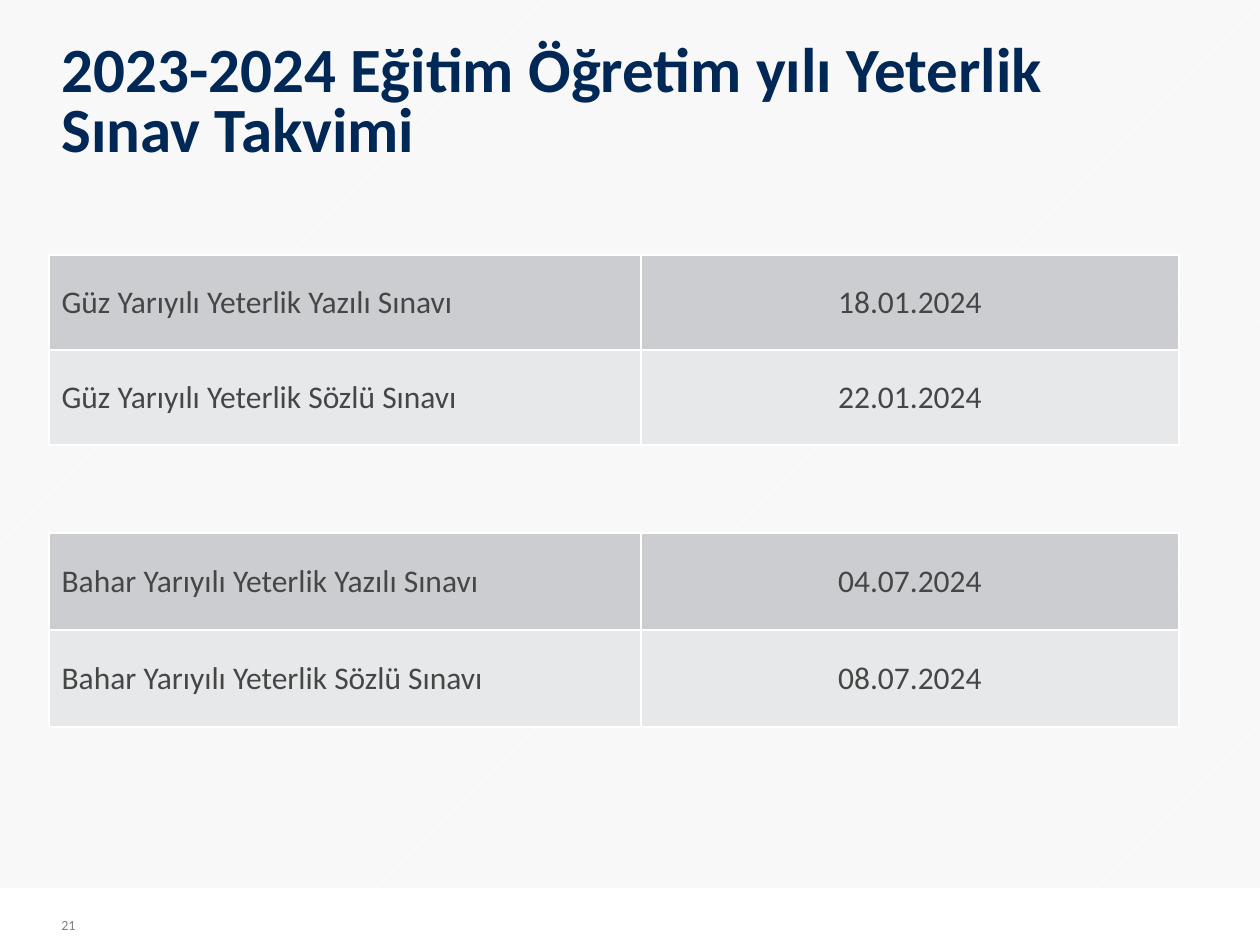
from lxml.etree import SubElement
from pptx import Presentation
from pptx.dml.color import RGBColor
from pptx.enum.dml import MSO_PATTERN
from pptx.enum.shapes import MSO_SHAPE
from pptx.enum.text import MSO_ANCHOR, MSO_AUTO_SIZE, PP_ALIGN
from pptx.oxml.ns import qn
from pptx.util import Pt

PX = 914400 / 126
COLORS = {
    "white": "FFFFFF", "page": "F8F8F8", "title": "002856", "text": "464646",
    "number": "808080", "dark_row": "CCCDD1", "light_row": "E7E8E9",
}
C = {name: RGBColor.from_string(value) for name, value in COLORS.items()}


def px(*values):
    return [round(v * PX) for v in values]


def style(p, size, color, bold=False):
    p.font.name = "Calibri"
    p.font.size = Pt(size)
    p.font.bold = bold
    p.font.color.rgb = C[color]


prs = Presentation()
prs.slide_width, prs.slide_height = px(1260, 945)
s = prs.slides.add_slide(prs.slide_layouts[5])

# Background and footer band
bg = s.background.fill
bg.patterned()
bg.pattern = MSO_PATTERN.PERCENT_5
bg.fore_color.rgb = C["white"]
bg.back_color.rgb = C["page"]
band = s.shapes.add_shape(MSO_SHAPE.RECTANGLE, *px(0, 888, 1260, 57))
band.shadow.inherit = False
band.fill.solid()
band.fill.fore_color.rgb = C["white"]
band.line.fill.background()

# Title
title = s.shapes.title
title.left, title.top, title.width, title.height = px(49, 34, 1130, 137)
tf = title.text_frame
tf.text = "2023-2024 Eğitim Öğretim yılı Yeterlik Sınav Takvimi"
tf.word_wrap = True
tf.auto_size = MSO_AUTO_SIZE.NONE
tf.vertical_anchor = MSO_ANCHOR.BOTTOM
p = tf.paragraphs[0]
p.alignment = PP_ALIGN.LEFT
p.line_spacing = 0.8
style(p, 36, "title", bold=True)

# Exam tables: term, top, row height, written and oral dates
terms = [
    ("Güz", 255, 95, ("18.01.2024", "22.01.2024")),
    ("Bahar", 533, 97, ("04.07.2024", "08.07.2024")),
]
for term, top, row_h, dates in terms:
    table = s.shapes.add_table(2, 2, *px(49, top, 1130, 2 * row_h)).table
    table.columns[0].width, table.columns[1].width = px(592, 538)
    for row, exam, date, fill in zip(range(2), ("Yazılı", "Sözlü"), dates,
                                     ("dark_row", "light_row")):
        texts = (f"{term} Yarıyılı Yeterlik {exam} Sınavı", date)
        for col, align in enumerate((PP_ALIGN.LEFT, PP_ALIGN.CENTER)):
            cell = table.cell(row, col)
            cell.text = texts[col]
            cell.vertical_anchor = MSO_ANCHOR.MIDDLE
            p = cell.text_frame.paragraphs[0]
            p.alignment = align
            style(p, 18, "text")
            # White borders precede the fill in the cell properties
            tcPr = cell._tc.get_or_add_tcPr()
            for side in ("a:lnL", "a:lnR", "a:lnT", "a:lnB"):
                ln = SubElement(tcPr, qn(side), w=str(Pt(1)))
                solid = SubElement(ln, qn("a:solidFill"))
                SubElement(solid, qn("a:srgbClr"), val=COLORS["white"])
            cell.fill.solid()
            cell.fill.fore_color.rgb = C[fill]

# Page number
tf = s.shapes.add_textbox(*px(49, 895, 45, 44)).text_frame
tf.text = "21"
tf.word_wrap = True
tf.vertical_anchor = MSO_ANCHOR.BOTTOM
p = tf.paragraphs[0]
p.space_after = Pt(6)
style(p, 8, "number")

prs.save("out.pptx")
